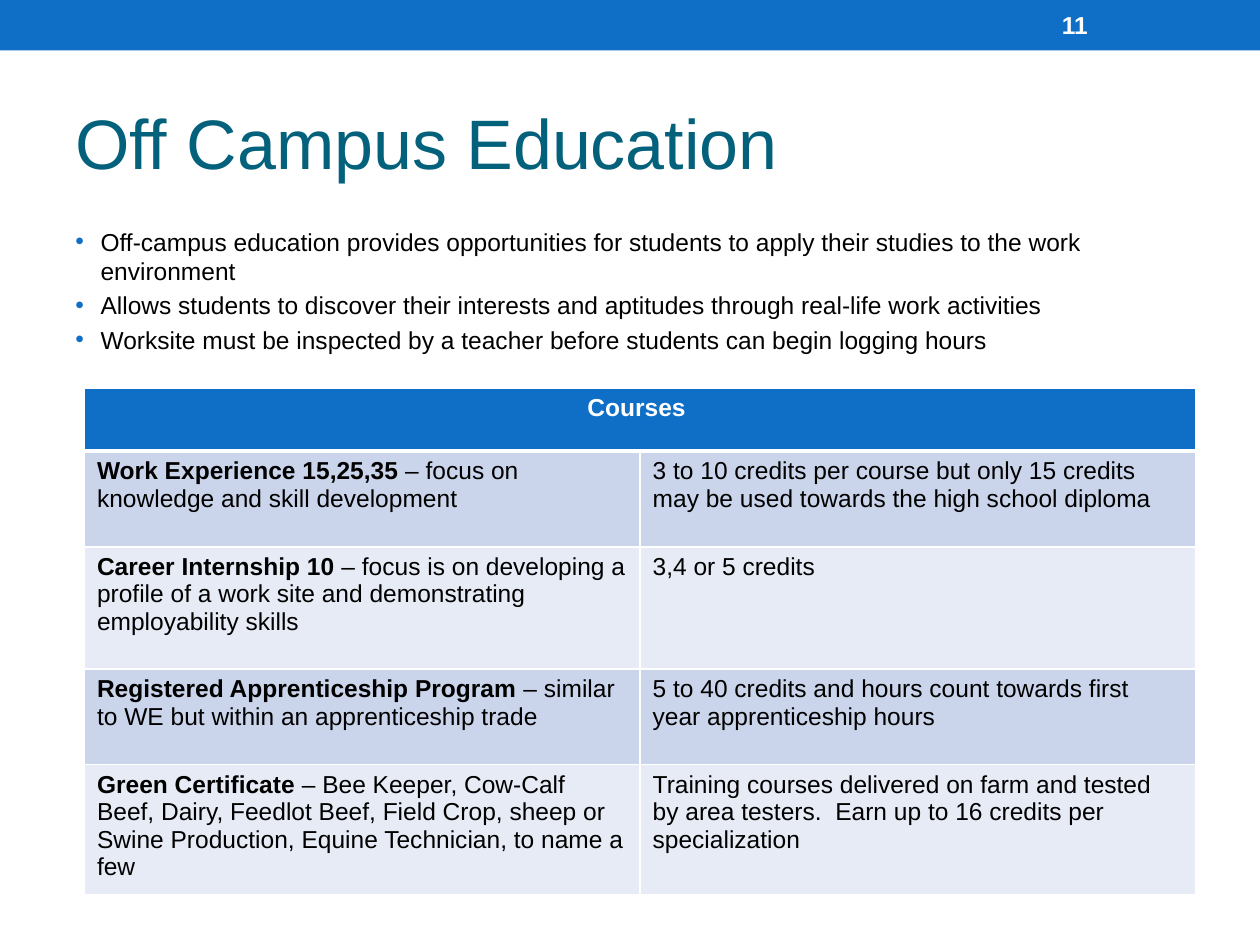
from lxml.etree import SubElement
from pptx import Presentation
from pptx.dml.color import RGBColor
from pptx.enum.shapes import MSO_SHAPE as Shape
from pptx.enum.text import MSO_ANCHOR as Anchor, PP_ALIGN as Align
from pptx.oxml import parse_xml
from pptx.oxml.ns import nsdecls, qn
from pptx.util import Inches, Pt

BLUE, TEAL, WHITE, BLACK = "0F6FC6", "04617B", "FFFFFF", "000000"
BANDS = ["CAD4EA", "E6EBF5"]

TITLE = "Off Campus Education"
PAGE_NUMBER = "11"
POINTS = [
    "Off-campus education provides opportunities for students to apply their studies to the work environment",
    "Allows students to discover their interests and aptitudes through real-life work activities",
    "Worksite must be inspected by a teacher before students can begin logging hours",
]
COURSES_HEADING = "Courses "
COURSES = [
    ("Work Experience 15,25,35 ", "– focus on knowledge and skill development",
     "3 to 10 credits per course but only 15 credits may be used towards the high school diploma"),
    ("Career Internship 10 ",
     "– focus is on developing a profile of a work site and demonstrating employability skills",
     "3,4 or 5 credits"),
    ("Registered Apprenticeship Program ", "– similar to WE but within an apprenticeship trade",
     "5 to 40 credits and hours count towards first year apprenticeship hours"),
    ("Green Certificate ",
     "– Bee Keeper, Cow-Calf Beef, Dairy, Feedlot Beef, Field Crop, sheep or Swine Production, "
     "Equine Technician, to name a few",
     "Training courses delivered on farm and tested by area testers.  Earn up to 16 credits per specialization"),
]
COLUMN_WIDTH = 4.41
ROW_HEIGHTS = [0.5, 0.76, 0.97, 0.76, 0.97]


def rgb(value):
    return RGBColor.from_string(value)


def write(paragraph, text, size=14, color=BLACK, bold=False):
    run = paragraph.add_run()
    run.text = text
    for name, value in {"name": "Arial", "size": Pt(size), "bold": bold}.items():
        setattr(run.font, name, value)
    run.font.color.rgb = rgb(color)


def text_frame(slide, box, anchor):
    frame = slide.shapes.add_textbox(*map(Inches, box)).text_frame
    for name, value in {"word_wrap": True, "vertical_anchor": anchor}.items():
        setattr(frame, name, value)
    return frame


def add_bullet(paragraph):
    properties = paragraph._p.get_or_add_pPr()
    properties.set("marL", str(Inches(0.2)))
    properties.set("indent", str(Inches(-0.2)))
    color = SubElement(properties, qn("a:buClr"))
    SubElement(color, qn("a:srgbClr")).set("val", BLUE)
    SubElement(properties, qn("a:buFont")).set("typeface", "Arial")
    SubElement(properties, qn("a:buChar")).set("char", "•")


def format_cell(cell, fill, bottom=1, top=1):
    cell.fill.solid()
    cell.fill.fore_color.rgb = rgb(fill)
    properties = cell._tc.get_or_add_tcPr()
    widths = {"lnL": 1, "lnR": 1, "lnT": top, "lnB": bottom}
    for position, (side, width) in enumerate(widths.items()):
        properties.insert(position, parse_xml(
            f'<a:{side} {nsdecls("a")} w="{Pt(width)}"><a:solidFill>'
            f'<a:srgbClr val="{WHITE}"/></a:solidFill></a:{side}>'))


def add_courses(slide):
    table = slide.shapes.add_table(
        len(ROW_HEIGHTS), 2, Inches(0.67), Inches(3.08),
        Inches(2 * COLUMN_WIDTH), Inches(sum(ROW_HEIGHTS))).table
    for column in table.columns:
        column.width = Inches(COLUMN_WIDTH)
    for row, height in zip(table.rows, ROW_HEIGHTS):
        row.height = Inches(height)

    heading = table.cell(0, 0)
    heading.merge(table.cell(0, 1))
    for column in range(2):
        format_cell(table.cell(0, column), BLUE, bottom=3)
    paragraph = heading.text_frame.paragraphs[0]
    paragraph.alignment = Align.CENTER
    write(paragraph, COURSES_HEADING, color=WHITE, bold=True)

    for row, (course, focus, credits) in enumerate(COURSES, 1):
        for column, parts in enumerate([[(course, True), (focus, False)], [(credits, False)]]):
            cell = table.cell(row, column)
            format_cell(cell, BANDS[(row - 1) % 2], top=3 if row == 1 else 1)
            for text, bold in parts:
                write(cell.text_frame.paragraphs[0], text, bold=bold)


def main():
    deck = Presentation()
    deck.slide_width, deck.slide_height = Inches(10), Inches(7.5)
    slide = deck.slides.add_slide(deck.slide_layouts[6])

    banner = slide.shapes.add_shape(Shape.RECTANGLE, 0, 0, Inches(10), Inches(0.4))
    banner.shadow.inherit = False
    banner.fill.solid()
    banner.fill.fore_color.rgb = rgb(BLUE)
    banner.line.fill.background()

    title = text_frame(slide, (0.5, 0.58, 9, 1.08), Anchor.MIDDLE)
    write(title.paragraphs[0], TITLE, 40, TEAL)

    body = text_frame(slide, (0.5, 1.75, 9, 5.33), Anchor.TOP)
    for index, point in enumerate(POINTS):
        paragraph = body.add_paragraph() if index else body.paragraphs[0]
        paragraph.space_before = Pt(2.8 if index else 0)
        add_bullet(paragraph)
        write(paragraph, point)

    number = text_frame(slide, (8.33, 0.02, 1.17, 0.36), Anchor.MIDDLE)
    write(number.paragraphs[0], PAGE_NUMBER, color=WHITE, bold=True)

    add_courses(slide)
    deck.save("out.pptx")


if __name__ == "__main__":
    main()
